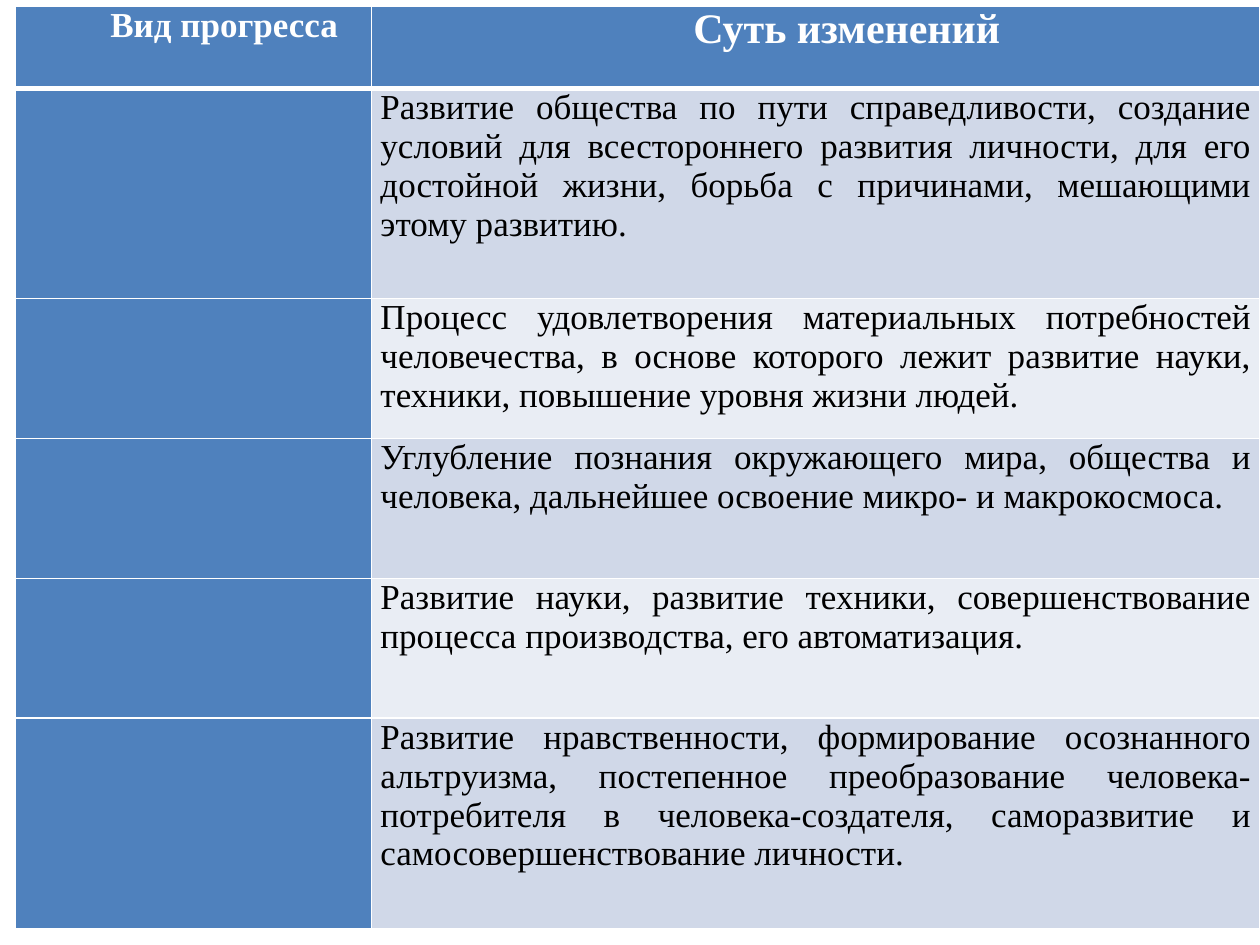
"""Build a slide with a table of the kinds of progress and what each one changes."""
from lxml import etree
from pptx import Presentation
from pptx.dml.color import RGBColor
from pptx.enum.text import PP_ALIGN
from pptx.oxml.ns import qn
from pptx.util import Inches, Pt

CENTER, JUSTIFY = PP_ALIGN.CENTER, PP_ALIGN.JUSTIFY
BLUE = RGBColor(0x4F, 0x81, 0xBD)
DARK = RGBColor(0xD0, 0xD8, 0xE8)
LIGHT = RGBColor(0xE9, 0xED, 0xF4)
WHITE = RGBColor(0xFF, 0xFF, 0xFF)
BLACK = RGBColor(0, 0, 0)
FONT = "Times New Roman"

HEADS = [("Вид прогресса", 20), ("Суть изменений", 24)]
CHANGES = [
    "Развитие общества по пути справедливости, создание условий для всестороннего "
    "развития личности, для его достойной жизни, борьба с причинами, мешающими этому развитию.",
    "Процесс удовлетворения материальных потребностей человечества, в основе которого "
    "лежит развитие науки, техники, повышение уровня жизни людей.",
    "Углубление познания окружающего мира, общества и человека, дальнейшее освоение "
    "микро- и макрокосмоса.",
    "Развитие науки, развитие техники, совершенствование процесса производства, "
    "его автоматизация.",
    "Развитие нравственности, формирование осознанного альтруизма, постепенное "
    "преобразование человека-потребителя в человека-создателя, саморазвитие и "
    "самосовершенствование личности.",
]
WIDTHS = [2.83, 7.05]
HEIGHTS = [0.65, 1.67, 1.11, 1.11, 1.11, 1.67]


def style(cell, color, top, bottom):
    props = cell._tc.get_or_add_tcPr()
    for side, width in (("L", 1), ("R", 1), ("T", top), ("B", bottom)):
        line = etree.SubElement(props, qn(f"a:ln{side}"), w=str(Pt(width)))
        fill = etree.SubElement(line, qn("a:solidFill"))
        etree.SubElement(fill, qn("a:srgbClr"), val=str(WHITE))
    cell.fill.solid()
    cell.fill.fore_color.rgb = color
    cell.margin_left = cell.margin_right = Inches(0.07)
    cell.margin_top = cell.margin_bottom = 0


def write(cell, text, size, color, bold, align):
    para = cell.text_frame.paragraphs[0]
    para.alignment = align
    run = para.add_run()
    run.text = text
    run.font.name = FONT
    run.font.size = Pt(size)
    run.font.bold = bold
    run.font.color.rgb = color
    return para


prs = Presentation()
prs.slide_width, prs.slide_height = Inches(10), Inches(7.5)
slide = prs.slides.add_slide(prs.slide_layouts[6])
table = slide.shapes.add_table(
    len(HEIGHTS), len(WIDTHS), Inches(0.12), Inches(0.05),
    Inches(sum(WIDTHS)), Inches(sum(HEIGHTS))).table
for col, width in zip(table.columns, WIDTHS):
    col.width = Inches(width)
for row, height in zip(table.rows, HEIGHTS):
    row.height = Inches(height)

for cell, (text, size) in zip(table.rows[0].cells, HEADS):
    style(cell, BLUE, 1, 3)
    para = write(cell, text, size, WHITE, True, CENTER)
    para._p.get_or_add_pPr().set("indent", str(Inches(0.49)))

for num, text in enumerate(CHANGES, 1):
    kind, change = table.rows[num].cells
    top = 3 if num == 1 else 1
    style(kind, BLUE, top, 1)
    style(change, DARK if num % 2 else LIGHT, top, 1)
    write(change, text, 20, BLACK, False, JUSTIFY)

prs.save("out.pptx")
